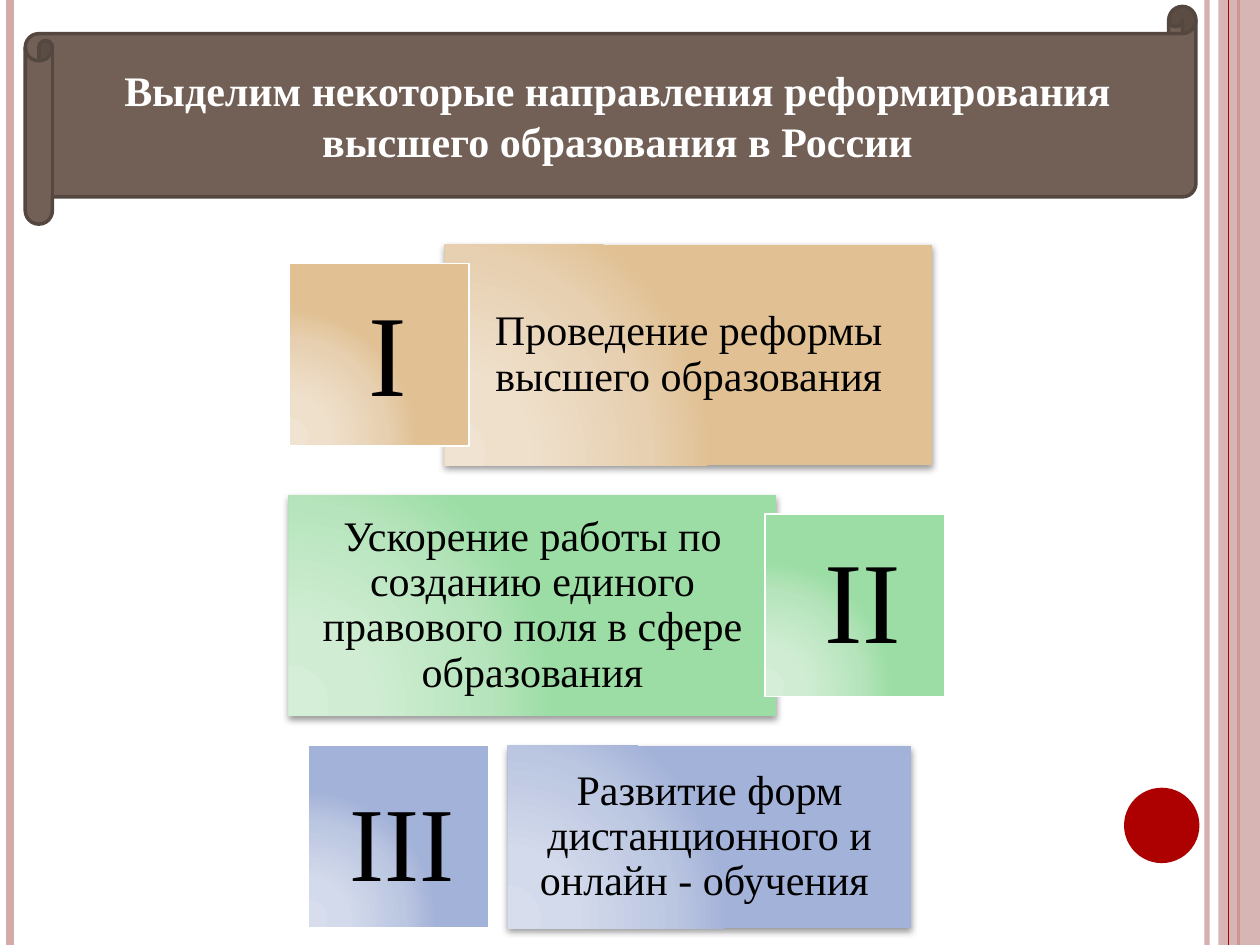
"""Build a slide on three directions of higher education reform in Russia."""
from lxml import etree
from pptx import Presentation
from pptx.dml.color import RGBColor as RGB
from pptx.enum.shapes import MSO_CONNECTOR, MSO_SHAPE as SHAPE
from pptx.enum.text import MSO_ANCHOR, PP_ALIGN
from pptx.oxml import parse_xml
from pptx.oxml.ns import nsdecls, qn
from pptx.util import Cm, Pt

THEME = {
    "font": "Times New Roman", "body": 24,
    "white": "FFFFFF", "black": "000000", "red": "AD0101", "pink": "D3ABAB",
    "brown": "726056", "dark_brown": "544740",
    "sand": ("F0E3D1", "EFE0CC", "E7D0B1", "E1C194"),
    "green": ("D4EED7", "D0EDD3", "B6E4BC", "9BDDA4"),
    "blue": ("D7DDEC", "D3DAEB", "BBC6E1", "A3B2D8"),
}


def add_figure(kind, left, top, width, height, fill, line=None, line_width=1):
    figure = slide.shapes.add_shape(kind, Cm(left), Cm(top), Cm(width), Cm(height))
    figure.shadow.inherit = False
    if isinstance(fill, tuple):
        figure.fill.background()
        stops = "".join(f'<a:gs pos="{pos}000"><a:srgbClr val="{color}"/></a:gs>'
                        for pos, color in zip((0, 30, 75, 100), fill))
        properties = figure.fill._xPr
        properties.replace(properties.find(qn("a:noFill")), parse_xml(
            f'<a:gradFill {nsdecls("a")} rotWithShape="1"><a:gsLst>{stops}</a:gsLst>'
            '<a:path path="circle"><a:fillToRect l="5000" t="100000" r="120000" b="10000"/>'
            '</a:path></a:gradFill>'))
    else:
        figure.fill.solid()
        figure.fill.fore_color.rgb = RGB.from_string(fill)
    if line:
        figure.line.color.rgb = RGB.from_string(line)
        figure.line.width = Pt(line_width)
    else:
        figure.line.fill.background()
    return figure


def write(figure, text, size, color, bold=False, spacing=1.0, anchor=MSO_ANCHOR.MIDDLE):
    frame = figure.text_frame
    frame.word_wrap = True
    frame.vertical_anchor = anchor
    paragraph = frame.paragraphs[0]
    paragraph.text = text
    paragraph.alignment = PP_ALIGN.CENTER
    paragraph.line_spacing = spacing
    paragraph.font.name = THEME["font"]
    paragraph.font.size = Pt(size)
    paragraph.font.bold = bold
    paragraph.font.color.rgb = RGB.from_string(color)
    return frame


deck = Presentation()
deck.slide_width, deck.slide_height = Cm(25.4), Cm(19.05)
slide = deck.slides.add_slide(deck.slide_layouts[6])

side_band = add_figure(SHAPE.RECTANGLE, 24.56, 0, 0.84, 19.05, THEME["pink"])
band_color = side_band.fill._xPr.find(qn("a:solidFill"))[0]
etree.SubElement(band_color, qn("a:alpha"), val="87000")

for x, color, width, opacity in ((24.33, "pink", 3, 93), (0.2, "pink", 4.5, 100),
                                 (24.97, "red", 1.5, 100), (24.77, "red", 0.75, 100)):
    stripe = slide.shapes.add_connector(MSO_CONNECTOR.STRAIGHT, Cm(x), 0, Cm(x), Cm(19.05))
    stripe.line.color.rgb = RGB.from_string(THEME[color])
    stripe.line.width = Pt(width)
    stripe_properties = stripe._element.spPr
    if opacity < 100:
        stripe_color = next(stripe_properties.iter(qn("a:srgbClr")))
        etree.SubElement(stripe_color, qn("a:alpha"), val=f"{opacity}000")
    etree.SubElement(stripe_properties, qn("a:effectLst"))
    if color == "red":
        continue
    slide.shapes._spTree.remove(stripe._element)
    slide.shapes._spTree.insert(2, stripe._element)

slide.shapes._spTree.remove(side_band._element)
slide.shapes._spTree.insert(len(slide.shapes._spTree) - 1, side_band._element)

add_figure(SHAPE.OVAL, 22.66, 15.88, 1.52, 1.52, THEME["red"])
heading = add_figure(SHAPE.HORIZONTAL_SCROLL, 0.51, 0.13, 23.6, 4.39,
                     THEME["brown"], THEME["dark_brown"], 2)
write(heading, "Выделим некоторые направления реформирования высшего образования в России",
      THEME["body"], THEME["white"], bold=True)

tile_width, tile_height = 3.63, 3.68
first_top, pitch = 4.93, 5.05
directions = (
    ("sand", "Проведение реформы высшего образования",
     8.97, 9.83, 4.45, 5.82, "I", 66, (6.71, 5.54, 2.21, 3.07)),
    ("green", "Ускорение работы по созданию единого правового поля в сфере образования",
     5.82, 9.83, 4.45, 15.42, "II", 66, (16.1, 10.52, 2.59, 3.07)),
    ("blue", "Развитие форм дистанционного и онлайн - обучения ",
     10.24, 8.13, 3.68, 6.22, "III", 60, (6.5, 15.52, 3.2, 2.82)),
)
for row, (tint, direction, card_left, card_width, card_height,
          tile_left, numeral, numeral_size, numeral_box) in enumerate(directions):
    top = first_top + row * pitch
    card = add_figure(SHAPE.RECTANGLE, card_left, top, card_width, card_height, THEME[tint])
    card._element.spPr.find(qn("a:effectLst")).append(parse_xml(
        f'<a:outerShdw {nsdecls("a")} blurRad="{Pt(4)}" dist="{Pt(2)}" dir="5400000" '
        f'rotWithShape="0"><a:srgbClr val="{THEME["black"]}"><a:alpha val="40000"/>'
        '</a:srgbClr></a:outerShdw>'))
    frame = write(card, direction, THEME["body"], THEME["black"], spacing=0.9)
    frame.margin_left = frame.margin_right = frame.margin_top = frame.margin_bottom = Cm(0.25)
    add_figure(SHAPE.RECTANGLE, tile_left, top + (card_height - tile_height) / 2,
               tile_width, tile_height, THEME[tint], THEME["white"])
    label = slide.shapes.add_textbox(*map(Cm, numeral_box))
    write(label, numeral, numeral_size, THEME["black"], anchor=MSO_ANCHOR.TOP)

deck.save("out.pptx")
